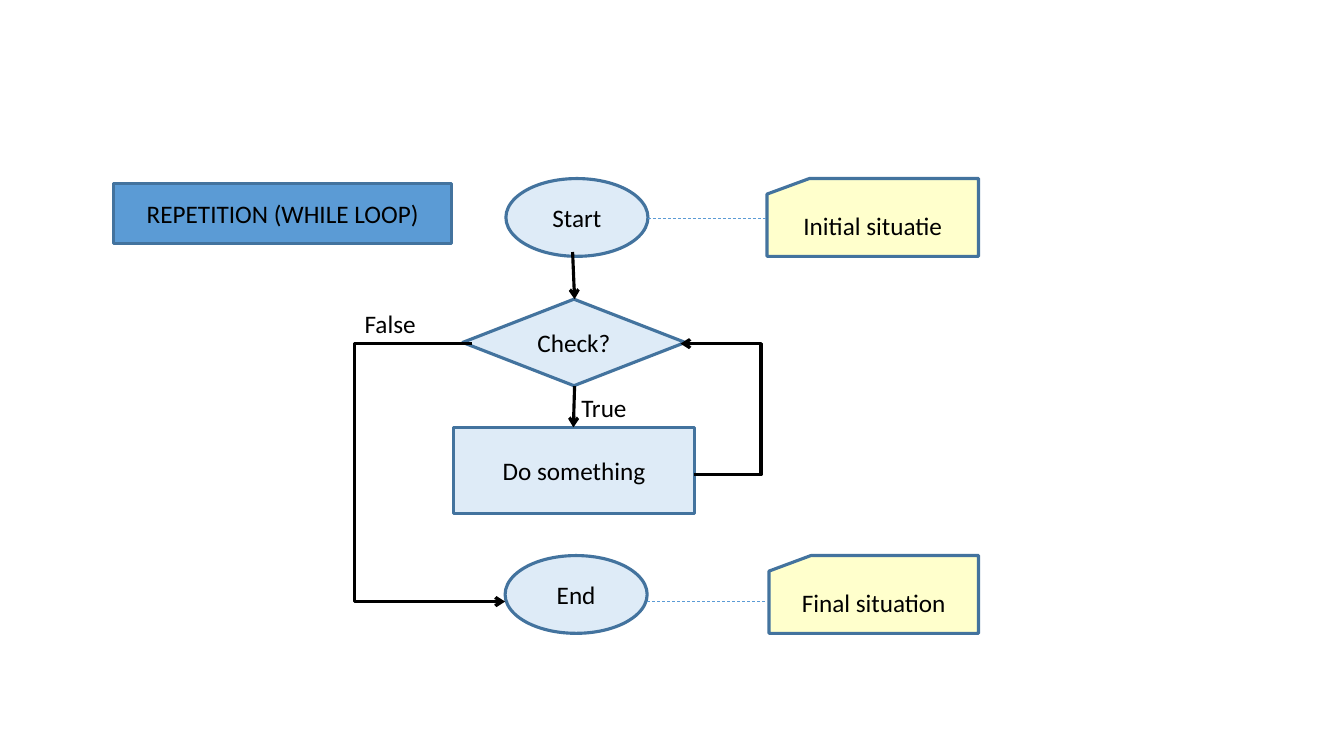
from dataclasses import dataclass

from lxml import etree
from pptx import Presentation
from pptx.dml.color import RGBColor
from pptx.enum.dml import MSO_LINE
from pptx.enum.shapes import MSO_CONNECTOR, MSO_SHAPE
from pptx.enum.text import MSO_ANCHOR, MSO_AUTO_SIZE, PP_ALIGN
from pptx.oxml.ns import qn
from pptx.util import Cm, Pt

ELLIPSE = MSO_SHAPE.OVAL
CARD = MSO_SHAPE.FLOWCHART_CARD
RECT = MSO_SHAPE.RECTANGLE
DIAMOND = MSO_SHAPE.DIAMOND
STRAIGHT = MSO_CONNECTOR.STRAIGHT
DASH = MSO_LINE.DASH
MIDDLE = MSO_ANCHOR.MIDDLE
TOP = MSO_ANCHOR.TOP
CENTER = PP_ALIGN.CENTER
LEFT = PP_ALIGN.LEFT
NO_FIT = MSO_AUTO_SIZE.NONE
GROW = MSO_AUTO_SIZE.SHAPE_TO_FIT_TEXT

TITLE_ONLY = 5
BLUE, PALE_BLUE, YELLOW = "5B9BD5", "DEEBF7", "FFFFCC"
OUTLINE, BLACK = "43739E", "000000"
THICK, THIN = 2.25, 0.5

Point = tuple[float, float]


@dataclass
class Box:
    """A rectangle in centimetres with its text."""
    text: str
    left: float
    top: float
    width: float
    height: float

    def place(self) -> tuple[Cm, Cm, Cm, Cm]:
        return Cm(self.left), Cm(self.top), Cm(self.width), Cm(self.height)


@dataclass
class Node(Box):
    kind: MSO_SHAPE
    fill: str = PALE_BLUE


TITLE = Box("REPETITION (WHILE LOOP)", 2.87, 4.62, 8.51, 1.52)
NODES = [
    Node("Start", 12.75, 4.5, 3.58, 1.96, ELLIPSE),
    Node("Initial situatie", 19.33, 4.5, 5.33, 1.96, CARD, YELLOW),
    Node("Check?", 11.66, 7.54, 5.61, 2.18, DIAMOND),
    Node("Do something", 11.43, 10.77, 6.07, 2.18, RECT),
    Node("End", 12.73, 14, 3.58, 1.96, ELLIPSE),
    Node("Final situation", 19.38, 14, 5.28, 1.96, CARD, YELLOW),
]
LABELS = [
    Box("True", 14.4, 9.75, 1.68, 1.02),
    Box("False", 8.94, 7.65, 1.8, 1.02),
]
NOTE_LINKS = [
    ((16.33, 5.49), (19.33, 5.49)),
    ((16.31, 15.16), (19.33, 15.16)),
]
ARROWS = [
    ((14.43, 6.35), (14.48, 7.54)),
    ((14.48, 9.73), (14.45, 10.77)),
]
ELBOWS = [
    [(11.89, 8.66), (8.94, 8.66), (8.94, 15.16), (12.73, 15.16)],
    [(17.48, 11.96), (19.18, 11.96), (19.18, 8.66), (17.15, 8.66)],
]


def rgb(color: str) -> RGBColor:
    return RGBColor.from_string(color)


def set_fill(sp, color: str) -> None:
    sp.fill.solid()
    sp.fill.fore_color.rgb = rgb(color)


def set_line(sp, color: str, width: float) -> None:
    sp.line.color.rgb = rgb(color)
    sp.line.width = Pt(width)


def add_arrowhead(sp) -> None:
    ln = sp.element.spPr.find(qn("a:ln"))
    etree.SubElement(ln, qn("a:tailEnd"), type="arrow")


def write(sp, text: str, align=CENTER, anchor=MIDDLE, wrap=True, fit=NO_FIT) -> None:
    tf = sp.text_frame
    tf.auto_size = fit
    tf.word_wrap = wrap
    tf.vertical_anchor = anchor
    p = tf.paragraphs[0]
    p.text = text
    p.alignment = align
    p.font.name = "Calibri"
    p.font.size = Pt(18)
    p.font.color.rgb = rgb(BLACK)


def add_title(slide, box: Box) -> None:
    sp = slide.shapes.title
    sp.left, sp.top, sp.width, sp.height = box.place()
    set_fill(sp, BLUE)
    set_line(sp, OUTLINE, THICK)
    write(sp, box.text)


def add_node(slide, node: Node) -> None:
    sp = slide.shapes.add_shape(node.kind, *node.place())
    sp.shadow.inherit = False
    set_fill(sp, node.fill)
    set_line(sp, OUTLINE, THICK)
    write(sp, node.text)


def add_label(slide, box: Box) -> None:
    sp = slide.shapes.add_textbox(*box.place())
    write(sp, box.text, LEFT, TOP, False, GROW)


def add_link(slide, start: Point, end: Point, color: str, width: float):
    sp = slide.shapes.add_connector(STRAIGHT, *(Cm(v) for v in start + end))
    set_line(sp, color, width)
    etree.SubElement(sp.element.spPr, qn("a:effectLst"))
    return sp


def add_elbow(slide, points: list[Point]) -> None:
    first, *rest = [(Cm(x), Cm(y)) for x, y in points]
    builder = slide.shapes.build_freeform(*first)
    builder.add_line_segments(rest, close=False)
    sp = builder.convert_to_shape()
    sp.shadow.inherit = False
    sp.fill.background()
    set_line(sp, BLACK, THICK)
    add_arrowhead(sp)


def main() -> None:
    prs = Presentation()
    prs.slide_width, prs.slide_height = Cm(33.87), Cm(19.05)
    slide = prs.slides.add_slide(prs.slide_layouts[TITLE_ONLY])

    # Title and flowchart nodes
    add_title(slide, TITLE)
    for node in NODES:
        add_node(slide, node)

    # Dashed links to the notes
    for start, end in NOTE_LINKS:
        add_link(slide, start, end, BLUE, THIN).line.dash_style = DASH

    # Branch labels
    for label in LABELS:
        add_label(slide, label)

    # Flow arrows
    for start, end in ARROWS:
        add_arrowhead(add_link(slide, start, end, BLACK, THICK))
    for points in ELBOWS:
        add_elbow(slide, points)

    prs.save("out.pptx")


if __name__ == "__main__":
    main()
